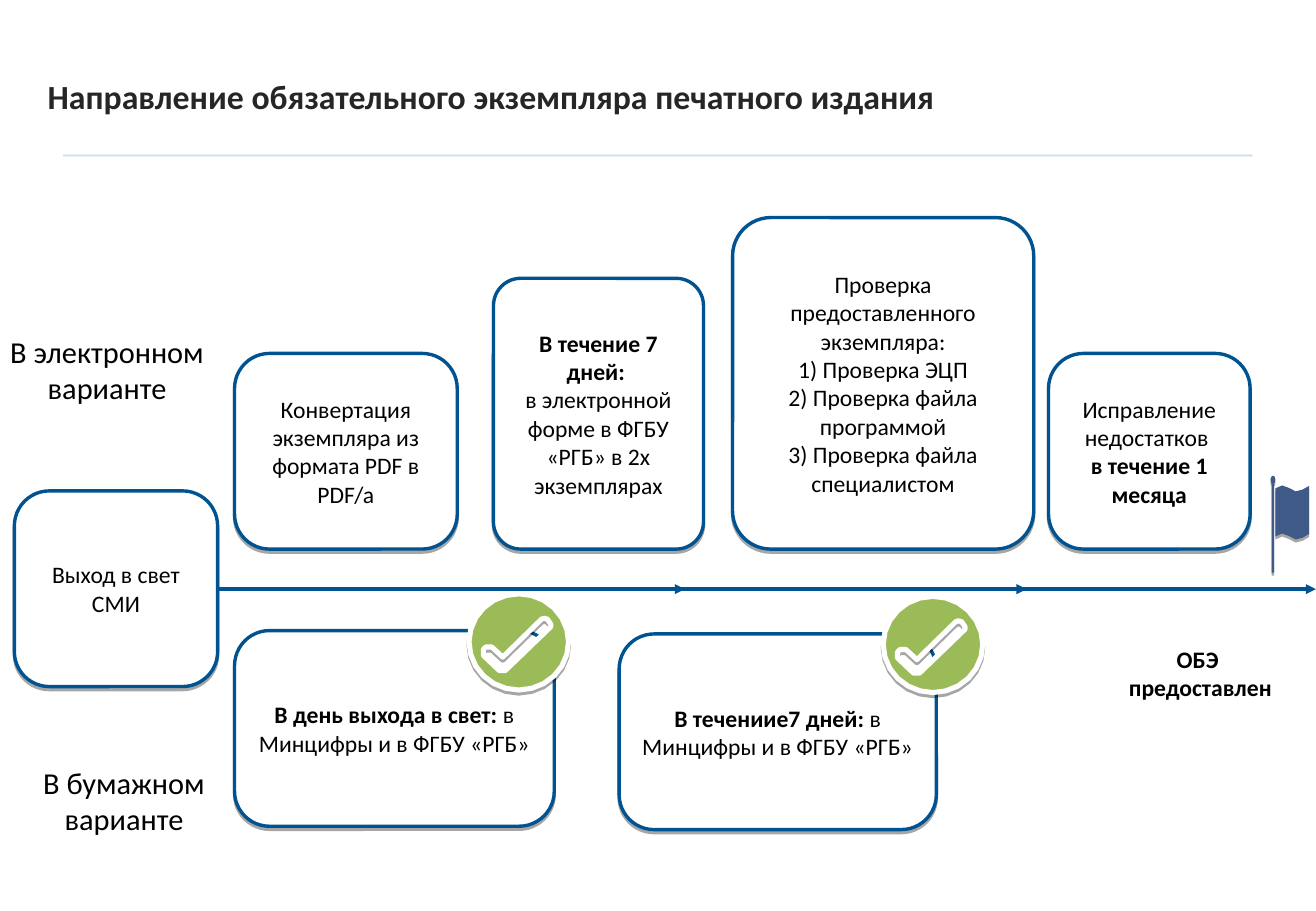
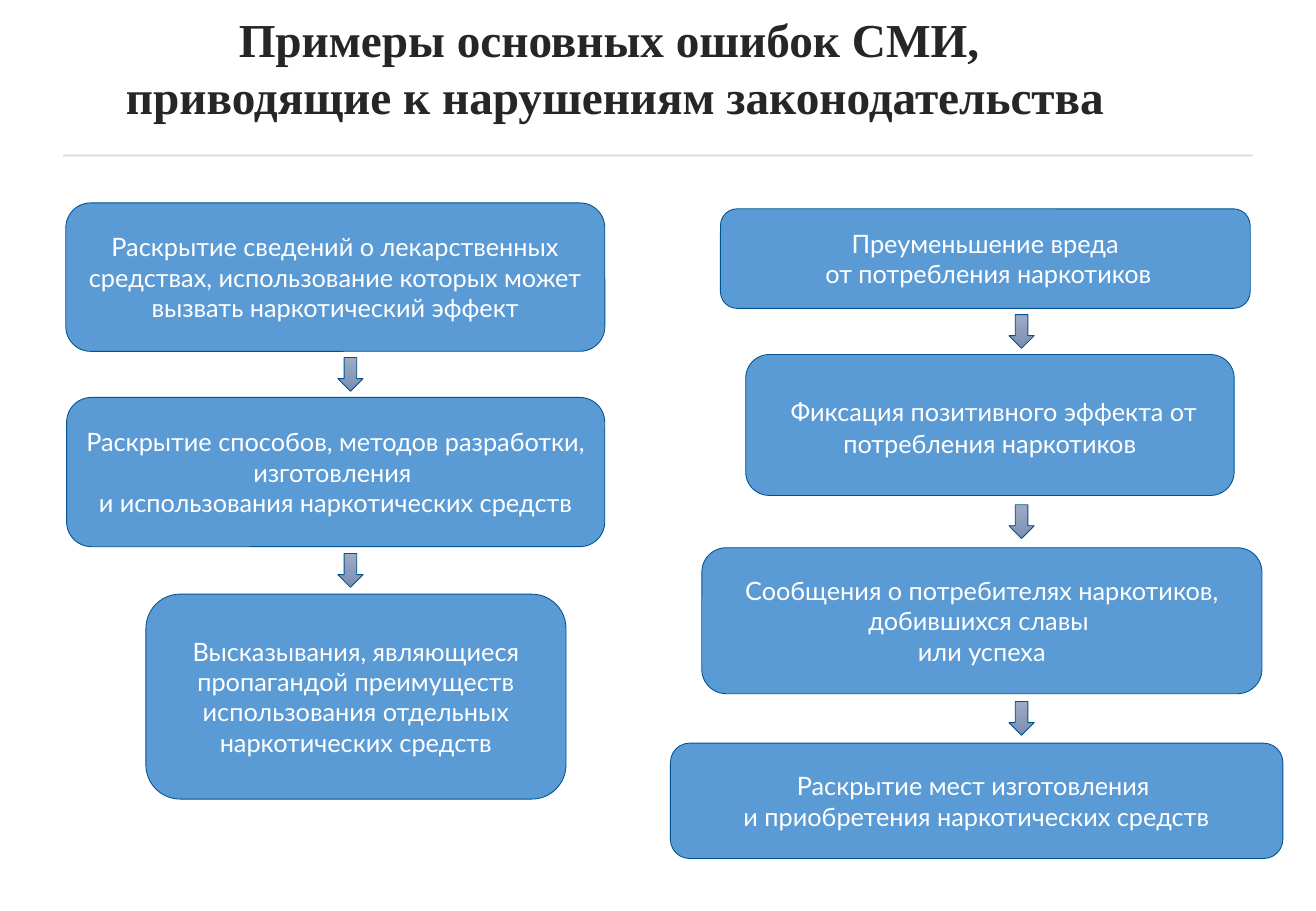
from dataclasses import dataclass
from itertools import pairwise
from math import cos, pi, sin

from lxml.etree import SubElement
from pptx import Presentation
from pptx.dml.color import RGBColor
from pptx.enum.shapes import MSO_CONNECTOR as Connector, MSO_SHAPE as Preset
from pptx.enum.text import MSO_ANCHOR as Anchor, MSO_AUTO_SIZE as AutoSize, PP_ALIGN as Align
from pptx.oxml.ns import qn
from pptx.util import Pt

Point = tuple[float, float]


@dataclass(frozen=True)
class Theme:
    blue: str = "005390"
    sky: str = "5B9BD5"
    green: str = "9BBB59"
    flag: str = "3F5A87"
    arrow_top: str = "9DAAC5"
    arrow_bottom: str = "7C8EB1"
    title: str = "262626"
    black: str = "000000"
    white: str = "FFFFFF"
    body_font: str = "Calibri"
    box_font: str = "Lato"
    serif_font: str = "Times New Roman"
    title_size: float = 20
    large_title_size: float = 28
    step_size: float = 14
    error_size: float = 15
    label_size: float = 18


THEME = Theme()


@dataclass(frozen=True)
class TextStyle:
    font: str
    size: float
    color: str
    bold: bool = False
    align: Align = Align.CENTER


@dataclass(frozen=True)
class BoxStyle:
    text: TextStyle
    fill: str
    line_width: float
    vertical_inset: float
    shadow: bool


@dataclass(frozen=True)
class Span:
    text: str
    bold: bool = False
    size: float | None = None


Paragraphs = list[list[Span]]


@dataclass(frozen=True)
class Area:
    left: float
    top: float
    width: float
    height: float

    @property
    def bottom(self) -> float:
        return self.top + self.height

    def lengths(self) -> tuple[Pt, Pt, Pt, Pt]:
        return Pt(self.left), Pt(self.top), Pt(self.width), Pt(self.height)


@dataclass(frozen=True)
class Box:
    area: Area
    paragraphs: Paragraphs
    corner: float


STEP_TEXT = TextStyle(THEME.body_font, THEME.step_size, THEME.black)
LABEL_TEXT = TextStyle(THEME.body_font, THEME.label_size, THEME.black)
STEP = BoxStyle(STEP_TEXT, THEME.white, 2, 5, True)
ERROR = BoxStyle(TextStyle(THEME.box_font, THEME.error_size, THEME.white), THEME.sky, 0.5, 3, False)


def rgb(color: str) -> RGBColor:
    return RGBColor.from_string(color)


def plain(*lines: str, bold: bool = False) -> Paragraphs:
    return [[Span(line, bold)] for line in lines]


def write(text_frame, paragraphs: Paragraphs, style: TextStyle) -> None:
    text_frame.word_wrap = True
    text_frame.text = "\n".join("" for _ in paragraphs)
    for paragraph, spans in zip(text_frame.paragraphs, paragraphs):
        paragraph.alignment = style.align
        for span in spans:
            for index, line in enumerate(span.text.split("\n")):
                if index:
                    paragraph.add_line_break()
                run = paragraph.add_run()
                run.text = line
                run.font.name = style.font
                run.font.size = Pt(span.size or style.size)
                run.font.bold = style.bold or span.bold
                run.font.color.rgb = rgb(style.color)


def set_insets(text_frame, vertical: float) -> None:
    text_frame.margin_left = text_frame.margin_right = Pt(5)
    text_frame.margin_top = text_frame.margin_bottom = Pt(vertical)
    text_frame.vertical_anchor = Anchor.MIDDLE


def add_alpha(color_element, percent: int) -> None:
    SubElement(color_element, qn("a:alpha"), val=str(percent * 1000))


def drop_shadow(shape) -> None:
    shape.shadow.inherit = False
    effects = shape.element.spPr.find(qn("a:effectLst"))
    shadow = SubElement(effects, qn("a:outerShdw"), blurRad="0", dist=str(Pt(1.8)),
                        dir="5400000", rotWithShape="0")
    add_alpha(SubElement(shadow, qn("a:srgbClr"), val=THEME.black), 35)


def set_line(shape, color: str, width: float) -> None:
    shape.line.color.rgb = rgb(color)
    shape.line.width = Pt(width)


def set_fill(shape, color: str) -> None:
    shape.fill.solid()
    shape.fill.fore_color.rgb = rgb(color)


def add_line(slide, start: Point, end: Point, width: float):
    connector = slide.shapes.add_connector(
        Connector.STRAIGHT, *(Pt(value) for value in (*start, *end)))
    set_line(connector, THEME.blue, width)
    SubElement(connector.element.spPr, qn("a:effectLst"))
    return connector


def add_timeline_arrow(slide, start: float, end: float) -> None:
    connector = add_line(slide, (start, 349.2), (end, 349.2), 2)
    SubElement(connector.element.spPr.find(qn("a:ln")), qn("a:tailEnd"), type="triangle")


def add_layout_rule(slide) -> None:
    rule = add_line(slide, (37.4, 92.2), (742.4, 92.2), 1)
    add_alpha(next(rule.element.spPr.iter(qn("a:srgbClr"))), 20)
    slide.slide_layout.element.cSld.spTree.append(rule.element)


def set_title(slide, area: Area, paragraphs: Paragraphs, style: TextStyle, anchor: Anchor) -> None:
    title = slide.shapes.title
    title.left, title.top, title.width, title.height = area.lengths()
    text_frame = title.text_frame
    write(text_frame, paragraphs, style)
    text_frame.auto_size = AutoSize.NONE
    text_frame.vertical_anchor = anchor


def add_box(slide, box: Box, style: BoxStyle) -> None:
    shape = slide.shapes.add_shape(Preset.ROUNDED_RECTANGLE, *box.area.lengths())
    shape.adjustments[0] = box.corner
    set_fill(shape, style.fill)
    set_line(shape, THEME.blue, style.line_width)
    shape.shadow.inherit = False
    if style.shadow:
        drop_shadow(shape)
    set_insets(shape.text_frame, style.vertical_inset)
    write(shape.text_frame, box.paragraphs, style.text)


def add_label(slide, area: Area, paragraphs: Paragraphs, style: TextStyle) -> None:
    label = slide.shapes.add_textbox(*area.lengths())
    set_insets(label.text_frame, 5)
    write(label.text_frame, paragraphs, style)


def ellipse(center: Point, radius_x: float, radius_y: float, count: int) -> list[Point]:
    angles = [2 * pi * step / count for step in range(count)]
    return [(center[0] + radius_x * cos(angle), center[1] + radius_y * sin(angle))
            for angle in angles]


def add_outline(slide, origin: Point, contours: list[list[Point]], color: str):
    scaled = [[(Pt(x), Pt(y)) for x, y in contour] for contour in contours]
    builder = slide.shapes.build_freeform(*scaled[0][0], scale=1.0)
    builder.add_line_segments(scaled[0][1:], close=True)
    for contour in scaled[1:]:
        builder.move_to(*contour[0])
        builder.add_line_segments(contour[1:], close=True)
    shape = builder.convert_to_shape(Pt(origin[0]), Pt(origin[1]))
    set_fill(shape, color)
    drop_shadow(shape)
    return shape


def add_check_badge(slide, origin: Point) -> None:
    check = [(44.5, 14.5), (46.5, 15), (48.5, 18), (48.5, 19.5), (21.5, 45.5), (18, 45.5),
             (8.5, 36.5), (8.5, 33), (10, 31.5), (13.5, 31.5), (20, 37.5), (43, 15)]
    circle = ellipse((29.5, 28.5), 29.5, 28.5, 24)
    badge = add_outline(slide, origin, [circle, check], THEME.green)
    set_line(badge, THEME.white, 3)


def add_flag(slide, origin: Point) -> None:
    wave = [(x, 7.6 - 1.8 * cos((x - 7.2) / 8.6 * pi)) for x in range(3, 24, 4)]
    cloth = wave + [(x, y + 28.5) for x, y in reversed(wave)]
    pole = [(0.7, 5), (2.2, 5), (2.2, 57.5), (0.7, 57.5)]
    knob = ellipse((1.5, 2.5), 1.5, 2.5, 8)
    flag = add_outline(slide, origin, [knob, pole, cloth], THEME.flag)
    flag.line.fill.background()


def add_down_arrow(slide, center_x: float, center_y: float) -> None:
    width, height = 15, 20
    area = Area(center_x - width / 2, center_y - height / 2, width, height)
    arrow = slide.shapes.add_shape(Preset.DOWN_ARROW, *area.lengths())
    arrow.fill.gradient()
    arrow.fill.gradient_angle = 270
    for stop, color in zip(arrow.fill.gradient_stops, (THEME.arrow_top, THEME.arrow_bottom)):
        stop.color.rgb = rgb(color)
    set_line(arrow, THEME.blue, 0.5)
    arrow.shadow.inherit = False


def add_error_column(slide, boxes: list[Box], arrow_x: float) -> None:
    for box in boxes:
        add_box(slide, box, ERROR)
    for upper, lower in pairwise(boxes):
        add_down_arrow(slide, arrow_x, (upper.area.bottom + lower.area.top) / 2)


def build_deposit_slide(slide) -> None:
    set_title(slide, Area(21, 12.5, 608.5, 92),
              plain("Направление обязательного экземпляра печатного издания"),
              TextStyle(THEME.body_font, THEME.title_size, THEME.title, True, Align.LEFT),
              Anchor.MIDDLE)
    slide.shapes.title.text_frame.paragraphs[0].line_spacing = 0.9
    paper_text = "в Минцифры и в ФГБУ «РГБ»"
    steps = [
        (Area(8.5, 291, 120.5, 116), plain("Выход в свет СМИ"), 0.179),
        (Area(139, 373.8, 189.5, 116),
         [[Span("В день выхода в свет: ", True), Span(paper_text)]], 0.179),
        (Area(367, 375.8, 188, 116),
         [[Span("В течениие7 дней: ", True), Span(paper_text)]], 0.179),
        (Area(139, 209.5, 132, 116),
         plain("Конвертация экземпляра из формата PDF в PDF/a"), 0.179),
        (Area(292.5, 165, 124.5, 160.5),
         [[Span("В течение 7 дней: ", True)],
          [Span("в электронной форме в ФГБУ «РГБ» в 2х экземплярах")]], 0.13),
        (Area(434.2, 129, 178.5, 196.5),
         plain("Проверка предоставленного экземпляра:", "1) Проверка ЭЦП",
               "2) Проверка файла программой", "3) Проверка файла специалистом"), 0.127),
        (Area(621.5, 209.5, 119.5, 116),
         [[Span("Исправление недостатков ")], [Span("в течение 1 месяца", True)]], 0.179),
    ]
    for area, paragraphs, corner in steps:
        add_box(slide, Box(area, paragraphs, corner), STEP)
    add_label(slide, Area(0, 192.4, 127, 53), plain("В электронном варианте"), LABEL_TEXT)
    add_label(slide, Area(8.5, 448, 130, 53), plain("В бумажном варианте"), LABEL_TEXT)
    add_label(slide, Area(643.5, 377, 136, 44),
              plain("ОБЭ ", "предоставлен", bold=True), STEP_TEXT)
    for start, end in ((129, 406), (597, 780), (382, 608.5)):
        add_timeline_arrow(slide, start, end)
    add_flag(slide, (753, 282))
    for origin in ((278, 352), (523.5, 353.5)):
        add_check_badge(slide, origin)


def build_errors_slide(slide) -> None:
    set_title(slide, Area(10.4, 2.4, 708, 75),
              plain("Примеры основных ошибок СМИ, ", "приводящие к нарушениям законодательства"),
              TextStyle(THEME.serif_font, THEME.large_title_size, THEME.title, True), Anchor.TOP)
    left_column = [
        (Area(39, 120.3, 319.5, 88), plain("Раскрытие сведений о лекарственных средствах, "
         "использование которых может вызвать наркотический эффект")),
        (Area(39.5, 235.6, 319, 88.5), plain("Раскрытие способов, методов разработки, "
         "изготовления \nи использования наркотических средств")),
        (Area(86.5, 352.2, 249, 121.5), plain("Высказывания, являющиеся пропагандой преимуществ "
         "использования отдельных наркотических средств")),
    ]
    right_column = [
        (Area(427, 123.8, 314, 59), plain("Преуменьшение вреда\n от потребления наркотиков")),
        (Area(442, 210.2, 289.5, 83.5), [[
            Span(" ", size=THEME.label_size),
            Span("Фиксация позитивного эффекта от потребления наркотиков")]]),
        (Area(416, 324.7, 332, 86.5), plain("Сообщения о потребителях наркотиков, "
         "добившихся славы \nили успеха")),
        (Area(397.4, 440.5, 363, 68.4), plain("Раскрытие мест изготовления \n"
         "и приобретения наркотических средств")),
    ]
    for column, arrow_x in ((left_column, 207.7), (right_column, 605.5)):
        add_error_column(slide, [Box(area, text, 0.167) for area, text in column], arrow_x)


def main() -> None:
    presentation = Presentation()
    presentation.slide_width, presentation.slide_height = Pt(780), Pt(540)
    title_only = presentation.slide_layouts[5]
    deposit_slide, errors_slide = (presentation.slides.add_slide(title_only) for _ in range(2))
    add_layout_rule(deposit_slide)
    build_deposit_slide(deposit_slide)
    build_errors_slide(errors_slide)
    presentation.save("out.pptx")


if __name__ == "__main__":
    main()
